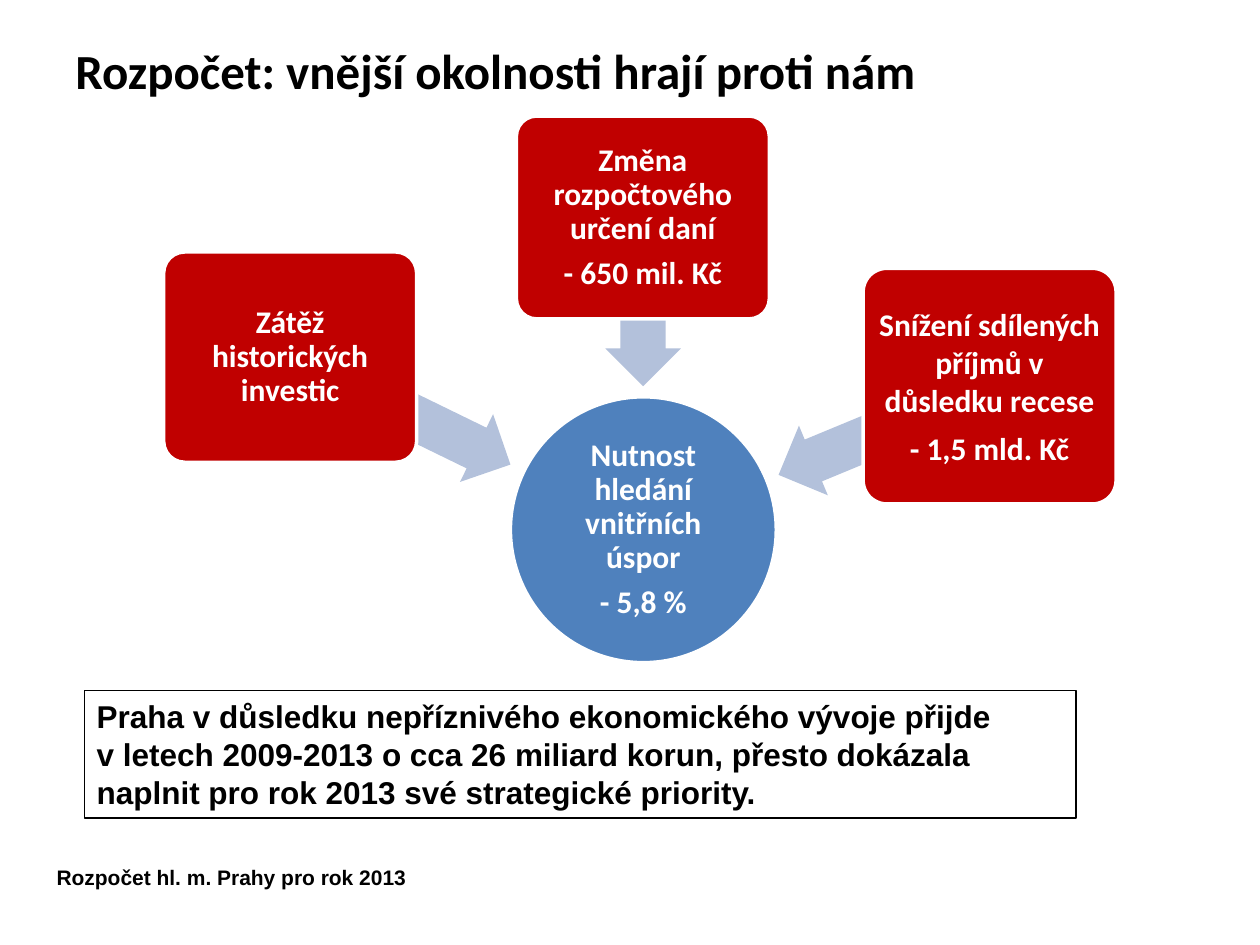
"""Build a budget slide with three pressures that point to one hub."""
from pptx import Presentation, util as u
from pptx.dml import color
from pptx.enum import shapes, text

HUES = {"ink": "000000", "paper": "FFFFFF", "red": "C00000",
        "blue": "4F81BD", "pale": "B3C1DB"}
KIND = shapes.MSO_SHAPE
ALIGN = text.PP_ALIGN
MID, TOP = text.MSO_ANCHOR.MIDDLE, text.MSO_ANCHOR.TOP
SIDES = ("margin_left", "margin_top", "margin_right", "margin_bottom")


def tint(name):
    """Return the named colour."""
    return color.RGBColor.from_string(HUES[name])


def apply(item, values):
    """Set each attribute of item from a dict."""
    for name, value in values.items():
        setattr(item, name, value)


def write(shape, lines, hue="ink", font="Calibri", size=18, anchor=MID,
          pads=(0.25, 0.13, 0.25, 0.13), para=None):
    """Fill a shape with bold paragraphs."""
    frame = shape.text_frame
    apply(frame, {"word_wrap": True, "vertical_anchor": anchor})
    apply(frame, {side: u.Cm(pad) for side, pad in zip(SIDES, pads)})
    for num, line in enumerate(lines):
        par = frame.add_paragraph() if num else frame.paragraphs[0]
        par.text = line
        apply(par, para or {"alignment": ALIGN.LEFT})
        apply(par.font, {"name": font, "size": u.Pt(size), "bold": True})
        par.font.color.rgb = tint(hue)


def draw(tree, kind, box, fill=None, line=None, width=2):
    """Add a flat preset shape in the given box."""
    shape = tree.add_shape(kind, *map(u.Cm, box))
    shape.shadow.inherit = False
    if fill:
        shape.fill.solid()
        shape.fill.fore_color.rgb = tint(fill)
    else:
        shape.fill.background()
    if line:
        shape.line.color.rgb = tint(line)
        shape.line.width = u.Pt(width)
    else:
        shape.line.fill.background()
    return shape


def node(tree, kind, box, fill, lines, pad, lead=0.9):
    """Add a filled shape with centred white text."""
    shape = draw(tree, kind, box, fill, "paper")
    if kind == KIND.ROUNDED_RECTANGLE:
        shape.adjustments[0] = 0.1
    write(shape, lines, "paper", pads=(pad,) * 4,
          para={"alignment": ALIGN.CENTER, "line_spacing": lead,
                "space_after": u.Pt(6.3)})


def arrow(tree, box, turn):
    """Add a pale arrow turned towards the hub."""
    shape = draw(tree, KIND.LEFT_ARROW, box, "pale")
    shape.adjustments[0], shape.adjustments[1] = 0.6, 0.5
    shape.rotation = turn


def chart(slide, left, top):
    """Place the hub, its arrows and the three pressures."""
    tree = slide.shapes.add_group_shape().shapes
    wide, thick, hub = 5.1, 1.52, 5.36
    node(tree, KIND.OVAL, (left + 6.99, top + 5.66, hub, hub), "blue",
         ["Nutnost hledání vnitřních úspor", "- 5,8 %"], 0.03)
    parts = [
        ((0, 2.74, 4.24), (2.29, 5.18, 4.95), 206, 0.9,
         ["Zátěž\vhistorických investic"]),
        ((7.11, 0, 4.09), (7.95, 2.97, 3.43), 270, 0.9,
         ["Změna rozpočtového určení daní", "- 650 mil. Kč"]),
        ((14.1, 3.07, 4.75), (12.22, 5.59, 4.62), 337.5, 1.0,
         ["Snížení sdílených příjmů v důsledku recese", "- 1,5 mld. Kč"]),
    ]
    for (x, y, high), (ax, ay, span), turn, lead, lines in parts:
        arrow(tree, (left + ax, top + ay, span, thick), turn)
        node(tree, KIND.ROUNDED_RECTANGLE, (left + x, top + y, wide, high),
             "red", lines, 0.1, lead)


def head(slide, *box):
    """Move and fill the title placeholder."""
    title = slide.shapes.title
    apply(title, dict(zip(("left", "top", "width", "height"),
                          map(u.Cm, box))))
    write(title, ["Rozpočet: vnější okolnosti hrají proti nám"], size=28)


def note(slide, *box):
    """Place the framed conclusion."""
    shape = draw(slide.shapes, KIND.RECTANGLE, box, line="ink", width=0.75)
    write(shape, ["Praha v důsledku nepříznivého ekonomického vývoje přijde\v"
                  "v letech 2009-2013 o cca 26 miliard korun, přesto dokázala "
                  "naplnit pro rok 2013 své strategické priority."],
          font="Arial", anchor=TOP)


def foot(slide, *box):
    """Place the source line at the bottom."""
    shape = slide.shapes.add_textbox(*map(u.Cm, box))
    write(shape, ["Rozpočet hl. m. Prahy pro rok 2013"], font="Arial",
          size=12, anchor=TOP, pads=(0.25, 0.62, 0.25, 0.13))


def main():
    """Build and save the slide."""
    deck = Presentation()
    apply(deck, {"slide_width": u.Cm(25.4), "slide_height": u.Cm(19.05)})
    slide = deck.slides.add_slide(deck.slide_layouts[5])
    head(slide, 1.27, 0.33, 22.86, 2.16)
    foot(slide, 0.89, 16.92, 17.78, 2.13)
    chart(slide, 3.3, 2.34)
    note(slide, 1.7, 13.92, 19.99, 2.57)
    deck.save("out.pptx")


if __name__ == "__main__":
    main()
